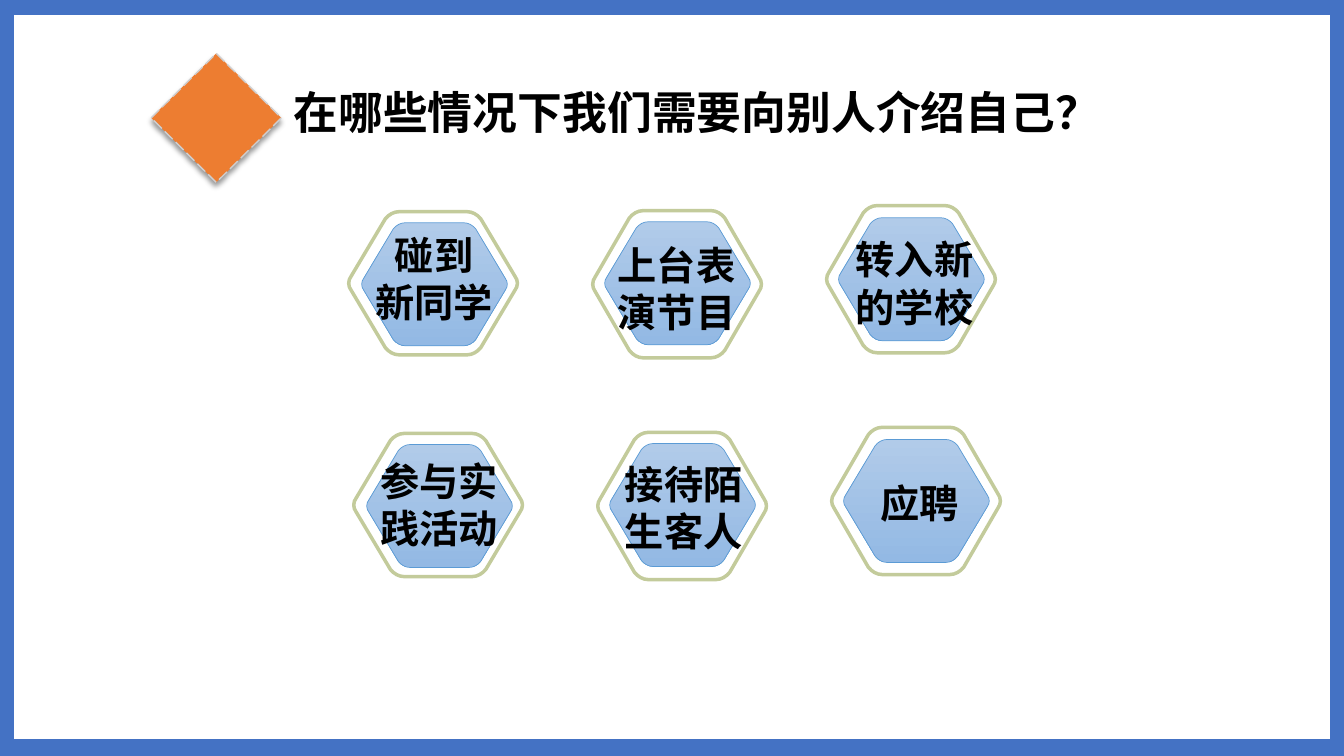
from lxml import etree
from pptx import Presentation
from pptx import util as u
from pptx.dml.color import RGBColor
from pptx.enum import dml, shapes, text
from pptx.oxml.ns import qn

FONT = "Noto Sans CJK SC"
COLUMNS = [
    {"left": 3.45, "top": 2.1, "height": 1.42, "core": (0.13, 0.11), "label_width": 1.45},
    {"left": 5.87, "top": 2.09, "height": 1.46, "core": (0.12, 0.11), "label_width": 1.62},
    {"left": 8.19, "top": 2.04, "height": 1.46, "core": (0.12, 0.12), "label_width": 1.62},
]
ROW_SHIFT = (0.05, 2.2)
SITUATIONS = [
    [("碰到\n新同学", 0.13, 0.15, 1.03),
     ("上台表演节目", 0.03, 0.25, 1.03),
     ("转入新的学校", 0.07, 0.25, 1.03)],
    [("参与实践活动", 0.13, 0.19, 1.03),
     ("接待陌生客人", 0.05, 0.23, 1.03),
     ("应聘", 0.07, 0.47, 0.57)],
]
LEFT_CORNER = [(0.02, 0.55), (0, 0.52), (0, 0.48), (0.02, 0.45)]
TOP_LEFT_CORNER = [(0.22, 0.05), (0.24, 0.02), (0.27, 0), (0.3, 0)]
TOP_RIGHT_CORNER = [(1 - x, y) for x, y in reversed(TOP_LEFT_CORNER)]
UPPER_CORNERS = [LEFT_CORNER, TOP_LEFT_CORNER, TOP_RIGHT_CORNER]
HEXAGON_CORNERS = UPPER_CORNERS + [[(1 - x, 1 - y) for x, y in corner]
                                   for corner in UPPER_CORNERS]


def color(hex_code):
    return RGBColor.from_string(hex_code)


def box(left, top, width, height):
    return [u.Inches(length) for length in (left, top, width, height)]


def set_line(shape, hex_code, width):
    shape.line.color.rgb = color(hex_code)
    shape.line.width = u.Pt(width)


def add_segment(outline, kind, points):
    segment = etree.SubElement(outline, qn(f"a:{kind}"))
    for x, y in points:
        etree.SubElement(segment, qn("a:pt"), x=str(round(x * int(outline.get("w")))),
                         y=str(round(y * int(outline.get("h")))))


def add_hexagon(slide, left, top, width, height):
    x, y, w, h = box(left, top, width, height)
    builder = slide.shapes.build_freeform(x, y)
    builder.add_line_segments([(x + w, y), (x + w, y + h), (x, y + h)])
    hexagon = builder.convert_to_shape()
    hexagon.shadow.inherit = False
    outline = next(hexagon.element.iter(qn("a:path")))
    for segment in list(outline):
        outline.remove(segment)
    for number, (start, *curve) in enumerate(HEXAGON_CORNERS):
        add_segment(outline, "lnTo" if number else "moveTo", [start])
        add_segment(outline, "cubicBezTo", curve)
    add_segment(outline, "close", [])
    return hexagon


def write(shape, wording, size, align, spacing=1.0):
    frame = shape.text_frame
    frame.text = wording
    frame.word_wrap = True
    frame.auto_size = text.MSO_AUTO_SIZE.SHAPE_TO_FIT_TEXT
    frame.vertical_anchor = text.MSO_ANCHOR.TOP
    for paragraph in frame.paragraphs:
        paragraph.alignment = align
        paragraph.line_spacing = spacing
        paragraph.space_before = u.Pt(0)
        paragraph.font.name = FONT
        paragraph.font.size = u.Pt(size)
        paragraph.font.bold = True
        paragraph.font.color.rgb = color("000000")


def add_master_frame(slide):
    frame = slide.shapes.add_shape(shapes.MSO_SHAPE.RECTANGLE, *box(0.02, 0.03, 13.29, 7.43))
    frame.shadow.inherit = False
    frame.fill.background()
    set_line(frame, "4472C4", 17.75)
    master = slide.slide_layout.slide_master
    master.shapes[0].element.addprevious(frame.element)


def add_diamond(slide):
    diamond = slide.shapes.add_shape(shapes.MSO_SHAPE.DIAMOND, *box(1.5, 0.53, 1.29, 1.28))
    diamond.fill.solid()
    diamond.fill.fore_color.rgb = color("ED7D31")
    set_line(diamond, "D0CECE", 1)
    diamond.line.dash_style = dml.MSO_LINE.LONG_DASH
    diamond.shadow.inherit = False
    effects = diamond.element.spPr.find(qn("a:effectLst"))
    shadow = etree.SubElement(effects, qn("a:outerShdw"), blurRad=str(u.Pt(4)),
                              dist=str(u.Pt(3)), dir="5400000", rotWithShape="0")
    shade = etree.SubElement(shadow, qn("a:srgbClr"), val="000000")
    etree.SubElement(shade, qn("a:alpha"), val="40000")


def add_title(slide, wording):
    title = slide.shapes.title
    title.left, title.top, title.width, title.height = box(2.8, 0.73, 8.4, 0.64)
    write(title, wording, 32, text.PP_ALIGN.LEFT, 1.2)
    title.text_frame.margin_left = title.text_frame.margin_right = u.Inches(0.11)
    title.text_frame.margin_top = title.text_frame.margin_bottom = 0


def add_situation(slide, column, row, wording, label_left, label_top, label_height):
    left = column["left"] + row * ROW_SHIFT[0]
    top = column["top"] + row * ROW_SHIFT[1]
    rim = add_hexagon(slide, left, top, 1.69, column["height"])
    rim.fill.background()
    set_line(rim, "C3CB9B", 2.5)
    core_left, core_top = column["core"]
    core = add_hexagon(slide, left + core_left, top + core_top, 1.46, 1.22)
    core.fill.gradient()
    core.fill.gradient_angle = 270
    for stop, shade in zip(core.fill.gradient_stops, ("B1CBE9", "93B9E4")):
        stop.color.rgb = color(shade)
    set_line(core, "5B9BD5", 0.5)
    label = slide.shapes.add_textbox(*box(left + label_left, top + label_top,
                                          column["label_width"], label_height))
    write(label, wording, 28, text.PP_ALIGN.CENTER)


def main():
    deck = Presentation()
    deck.slide_width, deck.slide_height = u.Inches(13.33), u.Inches(7.5)
    slide = deck.slides.add_slide(deck.slide_layouts[5])
    add_master_frame(slide)
    add_diamond(slide)
    add_title(slide, "在哪些情况下我们需要向别人介绍自己？")
    for row, situations in enumerate(SITUATIONS):
        for column, situation in zip(COLUMNS, situations):
            add_situation(slide, column, row, *situation)
    deck.save("out.pptx")


if __name__ == "__main__":
    main()
